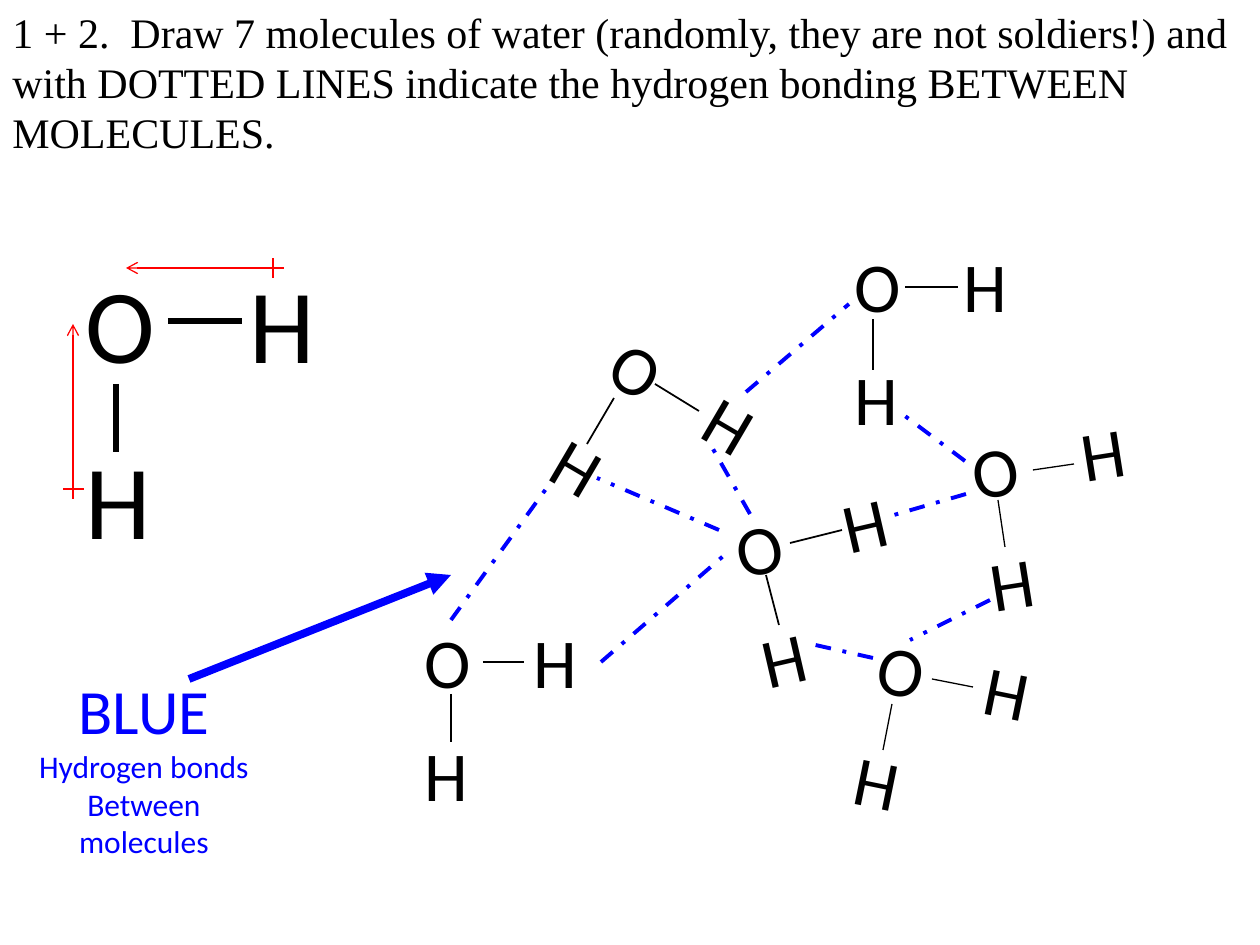
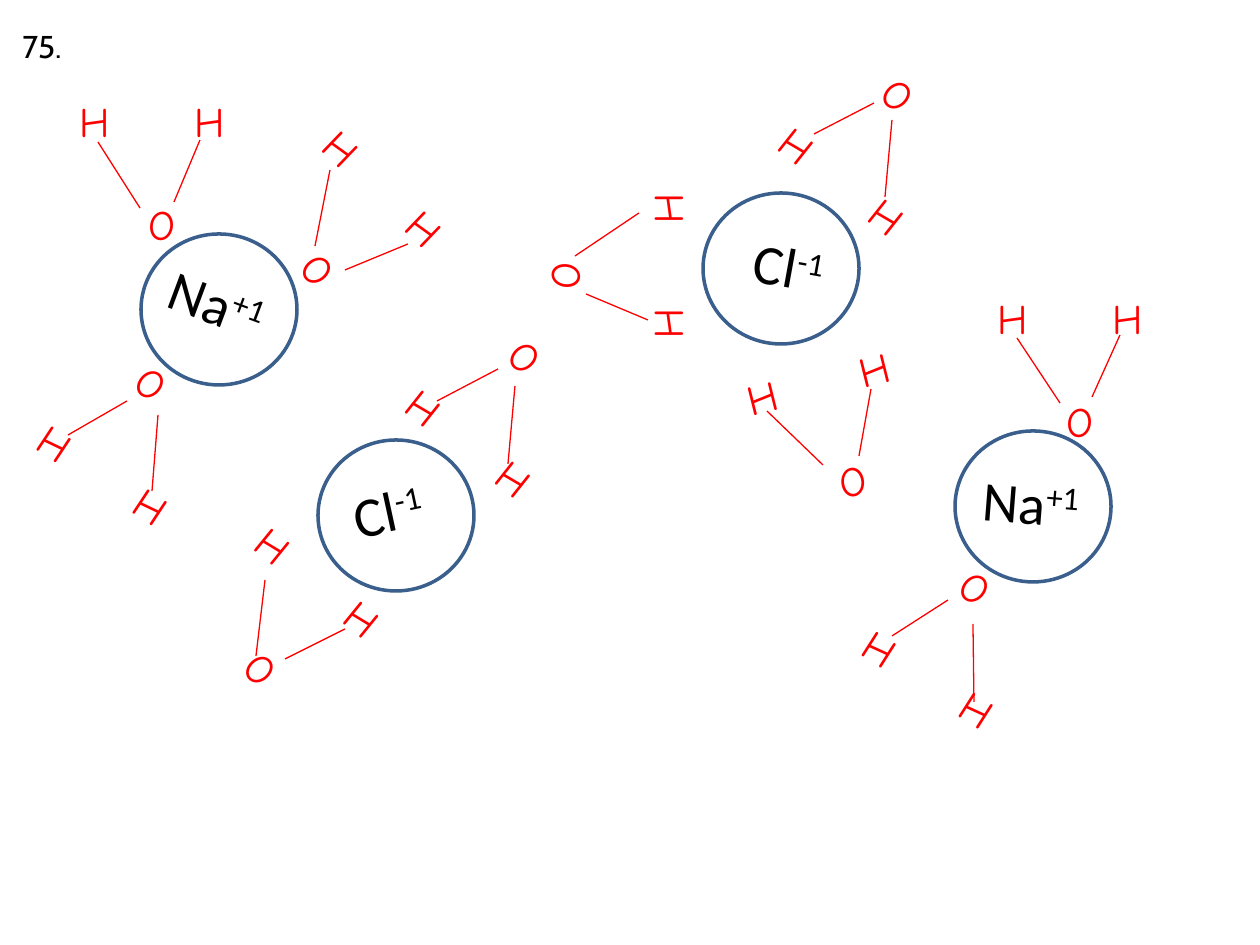
"""Build two slides on hydrogen bonding in water and on the hydration of ions."""
from lxml import etree
from pptx import Presentation, util as u
from pptx.dml.color import RGBColor
from pptx.enum import dml, shapes, text as t
from pptx.oxml.ns import qn

PX = 914400 / 126
BLACK = RGBColor(0, 0, 0)
WHITE = RGBColor(255, 255, 255)
RED = RGBColor(255, 0, 0)
BLUE = RGBColor(0, 0, 255)
STEEL = RGBColor(0x3A, 0x5F, 0x8C)
BODY, SERIF, HAND, SANS = "Calibri", "Times New Roman", "Comic Neue", "Cabin"

WATERS = [
    ((842, 236, 399, 212), 0, 1, [(958, 287, 905, 287), (873, 370, 873, 319)]),
    ((563, 347, 209, 212), 30.5, 1, [(699, 411, 655, 384), (587, 444, 614, 398)]),
    ((732, 460, 399, 212), 347, 1, [(842, 530, 790, 543), (779, 625, 766, 575)]),
    ((412, 612, 224, 212), 0, 0.75, [(483, 662, 524, 662), (451, 694, 451, 742)]),
    ((968, 408, 224, 212), 351, 0.75, [(1033, 470, 1074, 464), (998, 500, 1005, 547)]),
    ((853, 635, 224, 212), 11.5, 0.75, [(932, 679, 973, 687), (892, 704, 883, 750)]),
]
HYDROGEN_BONDS = [
    (746, 392, 849, 304), (451, 620, 546, 489), (601, 662, 728, 552),
    (750, 514, 713, 449), (965, 461, 905, 416), (966, 494, 887, 517),
    (719, 530, 597, 478), (873, 658, 811, 644), (990, 600, 910, 640),
]
IONS = [
    ((141, 234), "Na", "+1", (151, 263, 136, 81), 20.4, 6),
    ((703, 193), "Cl", "-1", (738, 232, 168, 118), 10.3, 0),
    ((955, 431), "Na", "+1", (965, 462, 136, 81), 4.5, 6),
    ((318, 440), "Cl", "-1", (344, 462, 168, 118), 347.8, 0),
]
HYDRATION = [
    ((32, 350), 213.5, [(158, 415, 152, 491), (127, 401, 68, 435)]),
    ((200, 543), 39.2, [(265, 580, 256, 656), (345, 629, 285, 659)]),
    ((529, 190), 90, [(639, 213, 575, 256), (648, 320, 586, 294)]),
    ((985, 286), 0, [(1017, 338, 1060, 403), (1120, 335, 1092, 397)]),
    ((67, 89), 0, [(98, 142, 140, 208), (200, 140, 174, 202)]),
    ((261, 147), 43.8, [(330, 170, 315, 246), (408, 244, 345, 270)]),
    ((745, 348), 346, [(767, 411, 823, 465), (871, 389, 859, 456)]),
    ((774, 58), 218.4, [(885, 197, 892, 120), (814, 134, 874, 103)]),
    ((857, 554), 212.5, [(974, 702, 973, 624), (892, 636, 948, 600)]),
    ((401, 320), 218.4, [(508, 464, 515, 386), (437, 401, 498, 369)]),
]


def px(*values):
    """Turn px lengths into EMU."""
    return [u.Emu(round(v * PX)) for v in values]


def add_text(s, box, lines, size, font=BODY, color=BLACK, rot=0, align=None,
             gap=0, indent=0, tab=0):
    """Add a text box; each line is a list of (text, size, baseline) runs."""
    sp = s.shapes.add_textbox(*px(*box))
    sp.rotation = rot
    tf = sp.text_frame
    tf.word_wrap = True
    for i, runs in enumerate(lines):
        p = tf.add_paragraph() if i else tf.paragraphs[0]
        p.alignment = align
        if i and gap:
            p.space_before = u.Pt(gap)
        pPr = p._p.get_or_add_pPr()
        if indent and i == len(lines) - 1:
            pPr.set("marL", str(px(indent)[0]))
        if tab and not i:
            tabs = etree.SubElement(pPr, qn("a:tabLst"))
            etree.SubElement(tabs, qn("a:tab"), pos=str(px(tab)[0]), algn="l")
        for words, run_size, baseline in runs:
            r = p.add_run()
            r.text = words
            r.font.name, r.font.size = font, u.Pt(run_size or size)
            r.font.color.rgb = color
            if baseline:
                r._r.get_or_add_rPr().set("baseline", str(baseline * 1000))
    return sp


def plain(*lines):
    """Give each line as a single run in the default format."""
    return [[(line, None, 0)] for line in lines]


def add_line(s, ends, color=BLACK, width=0.75, dash=None, head=None):
    """Add a straight line with an optional dash and end arrowhead."""
    sp = s.shapes.add_connector(shapes.MSO_CONNECTOR.STRAIGHT, *px(*ends))
    sp.line.color.rgb = color
    sp.line.width = u.Pt(width)
    if dash:
        sp.line.dash_style = dash
    if head:
        etree.SubElement(sp.line._get_or_add_ln(), qn("a:tailEnd"), type=head)
    etree.SubElement(sp._element.spPr, qn("a:effectLst"))


def add_lines(s, lines, **fmt):
    """Add several lines in one format."""
    for ends in lines:
        add_line(s, ends, **fmt)


def add_water(s, box, rot, width, bonds, size=40, gap=17):
    """Add a water molecule with its oxygen at the corner."""
    add_lines(s, bonds, width=width)
    add_text(s, box, plain("O\tH", "H"), size, rot=rot, gap=gap, tab=size * 2.74)


def add_hydration_water(s, corner, rot, bonds):
    """Add a red water molecule with its oxygen below both hydrogens."""
    add_text(s, (*corner, 183, 165), plain("H\tH", "O"), 24, font=HAND,
             color=RED, rot=rot, gap=30, indent=69, tab=115)
    add_lines(s, bonds, color=RED)


def add_ion(s, corner, symbol, charge, box, rot, indent):
    """Add a circled ion with a raised charge."""
    sp = s.shapes.add_shape(shapes.MSO_SHAPE.OVAL, *px(*corner, 156, 151))
    sp.shadow.inherit = False
    sp.fill.solid()
    sp.fill.fore_color.rgb = WHITE
    sp.line.color.rgb = STEEL
    sp.line.width = u.Pt(2)
    add_text(s, box, [[(symbol, None, 0), (charge, None, 30)]], 32,
             rot=rot, indent=indent)


def build_bonding(s):
    """Fill the slide on hydrogen bonds between water molecules."""
    add_text(s, (0, 0, 1260, 204), plain(
        "1 + 2.  Draw 7 molecules of water (randomly, they are not soldiers!) and "
        "with DOTTED LINES indicate the hydrogen bonding BETWEEN MOLECULES."),
        24, font=SERIF)
    add_water(s, (73, 252, 514, 318), 0, 3,
              [(168, 321, 242, 321), (116, 384, 116, 452)], size=60, gap=29)
    add_lines(s, [(284, 268, 126, 268), (73, 499, 73, 324)], color=RED, head="arrow")
    add_lines(s, [(273, 278, 273, 258), (63, 489, 84, 489)], color=RED)
    for water in WATERS:
        add_water(s, *water)
    add_lines(s, HYDROGEN_BONDS, color=BLUE, width=2.25,
              dash=dml.MSO_LINE.DASH_DOT)
    add_text(s, (13, 665, 262, 204),
             [[("BLUE", 36, 0)], *plain("Hydrogen bonds", "Between molecules")],
             18, color=BLUE, align=t.PP_ALIGN.CENTER)
    add_line(s, (189, 679, 451, 575), color=BLUE, width=4.5, head="triangle")


def build_hydration(s):
    """Fill the slide on ions surrounded by water."""
    add_text(s, (10, 21, 1229, 60), plain("75."), 18, font=SANS)
    for ion in IONS:
        add_ion(s, *ion)
    for water in HYDRATION:
        add_hydration_water(s, *water)


def main():
    """Build and save the presentation."""
    prs = Presentation()
    prs.slide_width, prs.slide_height = px(1260, 945)
    for build in (build_bonding, build_hydration):
        build(prs.slides.add_slide(prs.slide_layouts[6]))
    prs.save("out.pptx")


if __name__ == "__main__":
    main()
